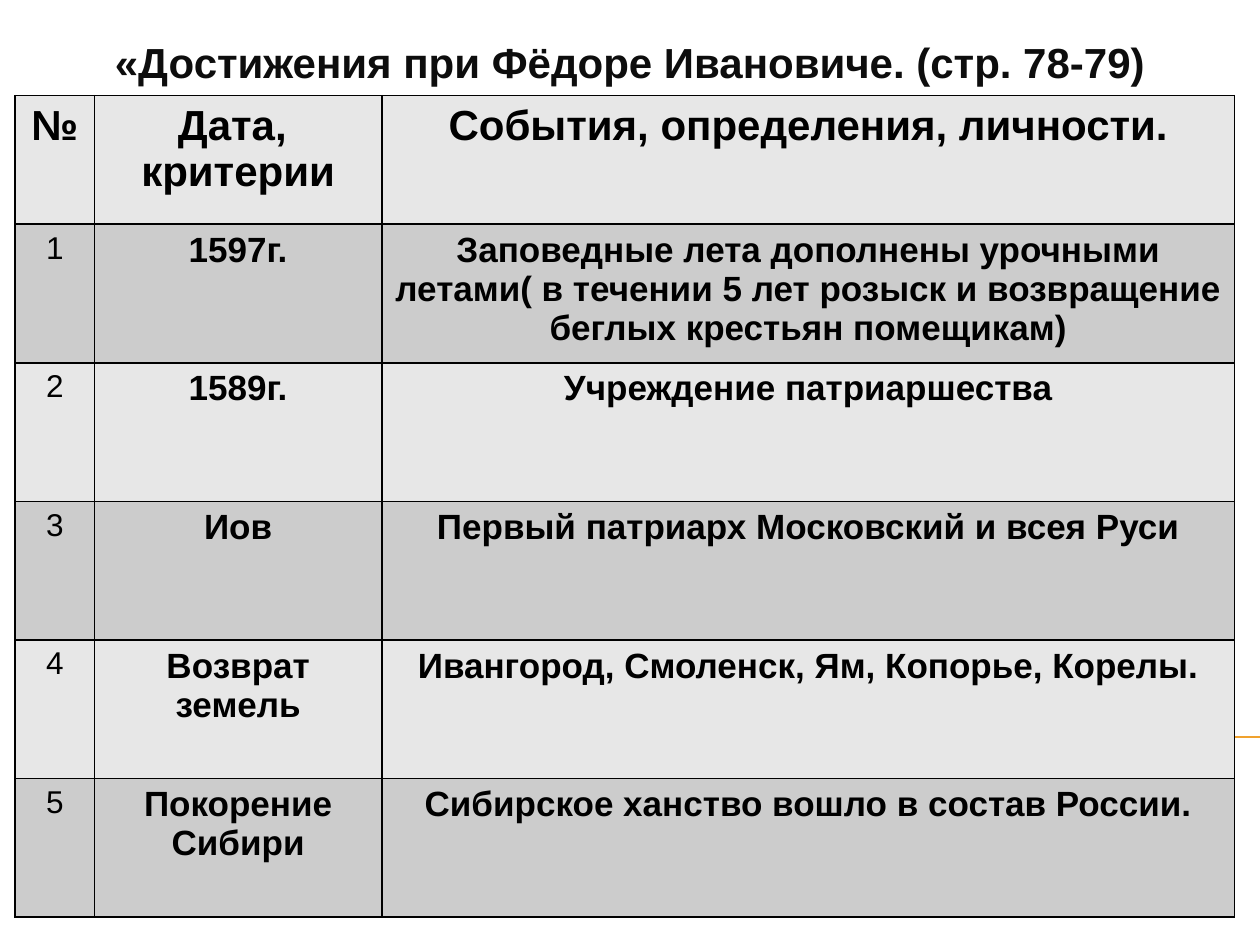
from pptx import Presentation
from pptx import util as u
from pptx.dml.color import RGBColor
from pptx.enum import shapes, text
from pptx.oxml import parse_xml
from pptx.oxml.ns import nsdecls

WIDTH, HEIGHT = 10, 7.5
BLACK = "000000"
BANDS = ("E7E7E7", "CCCCCC")
COLUMNS = (0.63, 2.28, 6.77)
ROWS = (1.02,) + (1.1,) * 5
HEADER = ("№", "Дата, \nкритерии", "События, определения, личности.")
ACHIEVEMENTS = (
    ("1597г.", "Заповедные лета дополнены урочными летами( в течении 5 лет "
               "розыск и возвращение беглых крестьян помещикам)"),
    ("1589г.", "Учреждение патриаршества"),
    ("Иов", "Первый патриарх Московский и всея Руси"),
    ("Возврат земель", "Ивангород, Смоленск, Ям, Копорье, Корелы."),
    ("Покорение Сибири", "Сибирское ханство вошло в состав России."),
)


def color(value):
    return RGBColor.from_string(value)


class SlideBuilder:
    font_name = "Arial"

    def __init__(self, presentation):
        self.slide = presentation.slides.add_slide(presentation.slide_layouts[5])

    def place(self, x, y):
        return u.Inches(x * WIDTH), u.Inches(y * HEIGHT)

    def fill_text(self, frame, content, size, bold=True, ink=BLACK):
        frame.text = content
        for paragraph in frame.paragraphs:
            paragraph.alignment = text.PP_ALIGN.CENTER
            paragraph.font.name = self.font_name
            paragraph.font.size = u.Pt(size)
            paragraph.font.bold = bold
            paragraph.font.color.rgb = color(ink)

    def title(self, content, x, y, width, height):
        shape = self.slide.shapes.title
        shape.left, shape.top = self.place(x, y)
        shape.width, shape.height = self.place(width, height)
        frame = shape.text_frame
        frame.word_wrap = True
        frame.vertical_anchor = text.MSO_ANCHOR.MIDDLE
        self.fill_text(frame, content, 24, ink="0D0D0D")
        frame.paragraphs[0].line_spacing = 0.85

    def rule(self, start, end, y, ink):
        line = self.slide.shapes.add_connector(
            shapes.MSO_CONNECTOR.STRAIGHT, *self.place(start, y), *self.place(end, y))
        line.line.color.rgb = color(ink)
        line.line.width = u.Pt(0.75)
        line._element.spPr.append(parse_xml(f"<a:effectLst {nsdecls('a')}/>"))

    def border(self, cell):
        properties = cell._tc.get_or_add_tcPr()
        for position, side in enumerate(("lnL", "lnR", "lnT", "lnB")):
            properties.insert(position, parse_xml(
                f'<a:{side} {nsdecls("a")} w="{u.Pt(1)}"><a:solidFill>'
                f'<a:srgbClr val="{BLACK}"/></a:solidFill></a:{side}>'))

    def table(self, records, x, y):
        table = self.slide.shapes.add_table(
            len(ROWS), len(COLUMNS), *self.place(x, y),
            u.Inches(sum(COLUMNS)), u.Inches(sum(ROWS))).table
        for column, width in zip(table.columns, COLUMNS):
            column.width = u.Inches(width)
        for row, height in zip(table.rows, ROWS):
            row.height = u.Inches(height)
        for row, record in enumerate(records):
            for column, content in enumerate(record):
                cell = table.cell(row, column)
                cell.fill.solid()
                cell.fill.fore_color.rgb = color(BANDS[row % 2])
                self.border(cell)
                size = 24 if row == 0 else 18 if column == 0 else 20
                self.fill_text(cell.text_frame, content, size, bold=size > 18)


def main():
    presentation = Presentation()
    presentation.slide_width = u.Inches(WIDTH)
    presentation.slide_height = u.Inches(HEIGHT)
    builder = SlideBuilder(presentation)
    builder.title("«Достижения при Фёдоре Ивановиче. (стр. 78-79)", 0, 0.03, 1, 0.08)
    builder.rule(0.06, 1, 0.78, "F0A22E")
    numbered = [(str(number), *entry) for number, entry in enumerate(ACHIEVEMENTS, 1)]
    builder.table([HEADER, *numbered], 0.12 / WIDTH, 0.76 / HEIGHT)
    presentation.save("out.pptx")


if __name__ == "__main__":
    main()
